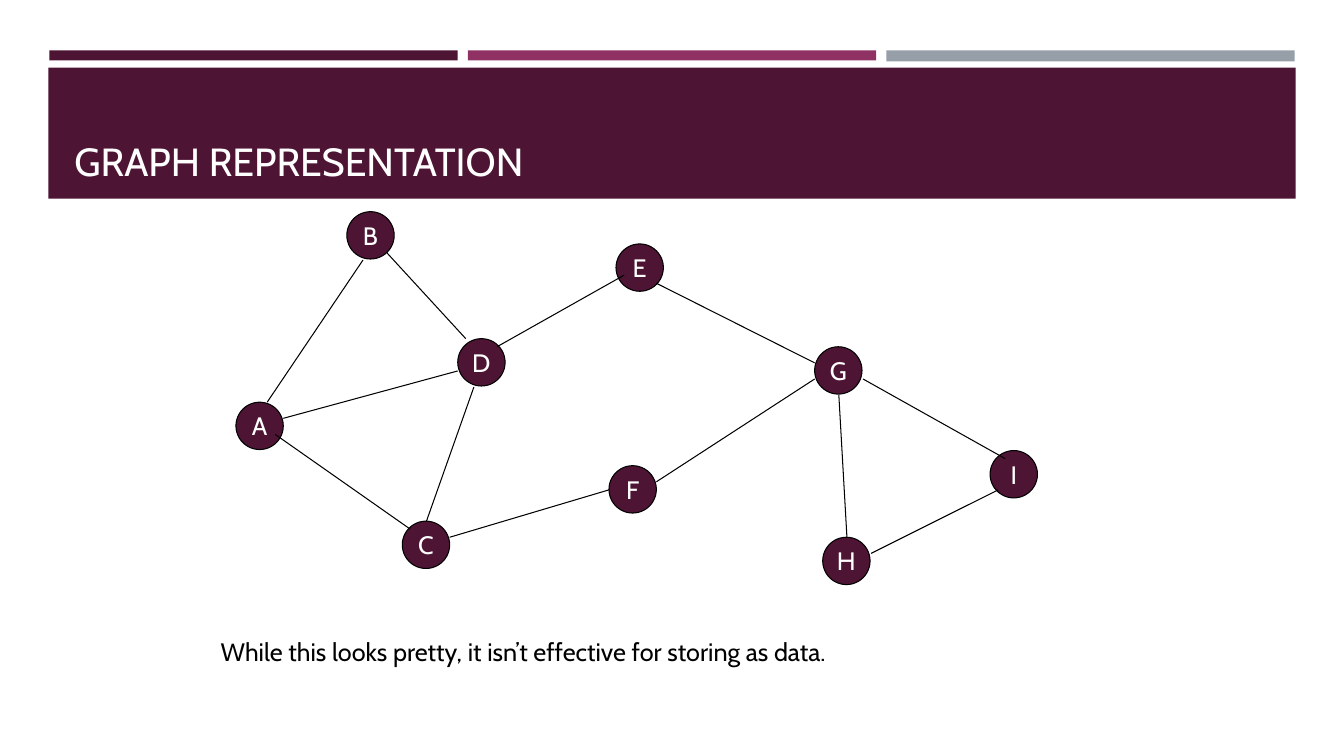
from pptx import Presentation
from pptx import util as u
from pptx.dml.color import RGBColor
from pptx.enum import shapes, text
from pptx.oxml import parse_xml
from pptx.oxml.ns import nsdecls

PX = 9144
FONT = "Cabin"
PLUM, WHITE, BLACK = "4D1434", "FFFFFF", "000000"


def color(code):
    return RGBColor.from_string(code)


def write(shape, words, size, code, form):
    frame = shape.text_frame
    for name, value in form.items():
        setattr(frame, name, value)
    run = frame.paragraphs[0].add_run()
    run.text = words
    look = {"name": FONT, "size": u.Pt(size)}
    for name, value in look.items():
        setattr(run.font, name, value)
    run.font.color.rgb = color(code)


deck = Presentation()
deck.slide_width, deck.slide_height = 1333 * PX, 750 * PX
slide = deck.slides.add_slide(deck.slide_layouts[6])
art = slide.shapes

bands = [
    (49, 50, 405, 10, PLUM),
    (464, 50, 405, 10, "903163"),
    (879, 50, 405, 11, "969FA7"),
    (48, 67, 1237, 130, PLUM),
]
for *box, fill in bands:
    band = art.add_shape(shapes.MSO_SHAPE.RECTANGLE, *[n * PX for n in box])
    band.shadow.inherit = False
    band.fill.solid()
    band.fill.fore_color.rgb = color(fill)
    band.line.fill.background()

title = art.add_textbox(*[n * PX for n in (64, 77, 1206, 111)])
write(title, "GRAPH REPRESENTATION", 28, WHITE,
      {"word_wrap": True, "vertical_anchor": text.MSO_ANCHOR.BOTTOM})

nodes = {
    "A": (234, 399), "B": (344, 210), "C": (399, 517),
    "D": (454, 336), "E": (611, 242), "F": (604, 462),
    "G": (808, 344), "H": (816, 533), "I": (982, 447),
}
SIZE = 47
for name, (left, top) in nodes.items():
    node = art.add_shape(shapes.MSO_SHAPE.OVAL,
                         left * PX, top * PX, SIZE * PX, SIZE * PX)
    node.shadow.inherit = False
    node.fill.solid()
    node.fill.fore_color.rgb = color(PLUM)
    node.line.color.rgb = color(BLACK)
    node.line.width = u.Pt(0.75)
    write(node, name, 18, WHITE,
          {"word_wrap": False, "vertical_anchor": text.MSO_ANCHOR.MIDDLE})
    node.text_frame.paragraphs[0].alignment = text.PP_ALIGN.CENTER

edges = {
    "AB": (265, 399, 360, 258),
    "BD": (383, 250, 462, 336),
    "AD": (281, 415, 454, 368),
    "AC": (273, 431, 407, 525),
    "CD": (423, 517, 470, 384),
    "DE": (493, 344, 619, 273),
    "CF": (446, 533, 604, 486),
    "EG": (651, 281, 808, 360),
    "FG": (651, 478, 808, 376),
    "GH": (832, 392, 840, 533),
    "HI": (864, 549, 990, 486),
    "GI": (856, 376, 997, 455),
}
for ends in edges.values():
    edge = art.add_connector(shapes.MSO_CONNECTOR.STRAIGHT,
                             *[n * PX for n in ends])
    edge.line.color.rgb = color(BLACK)
    edge.line.width = u.Pt(0.75)
    edge.element.spPr.append(parse_xml(f"<a:effectLst {nsdecls('a')}/>"))

note = art.add_textbox(*[n * PX for n in (209, 626, 900, 40)])
write(note, "While this looks pretty, it isn’t effective for storing as data.",
      18, BLACK,
      {"word_wrap": True, "auto_size": text.MSO_AUTO_SIZE.SHAPE_TO_FIT_TEXT})

deck.save("out.pptx")
